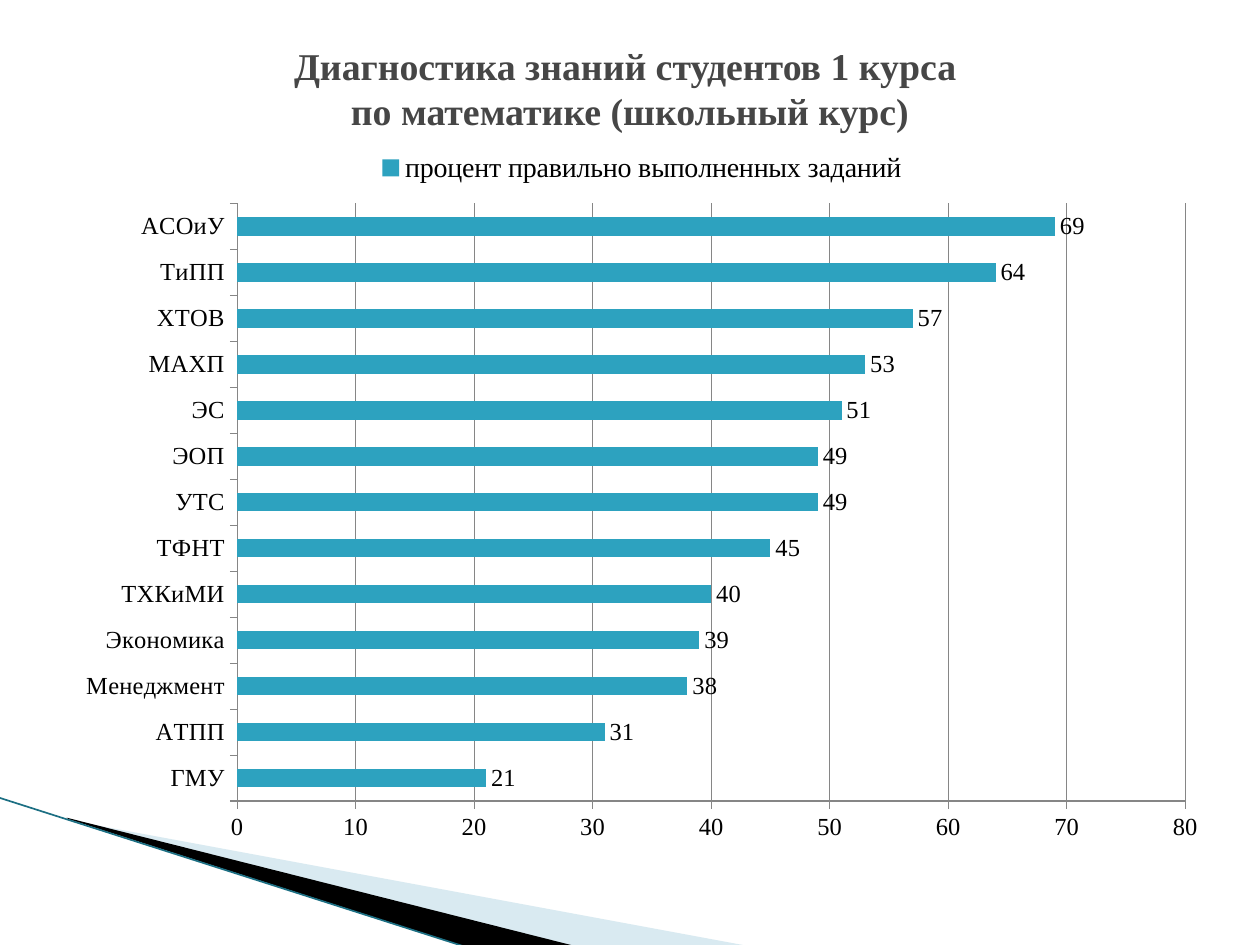
"""Builds a slide with a bar chart of first-year maths test results."""
from lxml import etree
from pptx import Presentation
from pptx.chart.data import CategoryChartData
from pptx.dml.color import RGBColor
from pptx.enum.chart import XL_CHART_TYPE, XL_LABEL_POSITION, XL_LEGEND_POSITION, XL_TICK_MARK
from pptx.enum.shapes import MSO_CONNECTOR
from pptx.enum.text import MSO_ANCHOR, PP_ALIGN
from pptx.oxml.ns import qn
from pptx.util import Inches, Pt

BAR = XL_CHART_TYPE.BAR_CLUSTERED
OUT_END = XL_LABEL_POSITION.OUTSIDE_END
TOP = XL_LEGEND_POSITION.TOP
TICK = XL_TICK_MARK.OUTSIDE
LINE = MSO_CONNECTOR.STRAIGHT
MIDDLE = MSO_ANCHOR.MIDDLE
CENTER = PP_ALIGN.CENTER
FACE = "Times New Roman"


def paint(fmt, color):
    fmt.solid()
    fmt.fore_color.rgb = RGBColor.from_string(color)


def style(font, size, color="000000", bold=False):
    font.name = FACE
    font.size = Pt(size)
    font.bold = bold
    paint(font.fill, color)


deck = Presentation()
deck.slide_width = Inches(10)
deck.slide_height = Inches(7.5)
slide = deck.slides.add_slide(deck.slide_layouts[5])
shapes = slide.shapes

wedges = [
    ("A0CBDC", 40, [(0.55, 6.51), (5.95, 7.51), (4.56, 7.51), (0.55, 6.5)]),
    ("000000", 100, [(0.53, 6.49), (4.57, 7.51), (3.72, 7.52), (0.54, 6.5)]),
]
for color, alpha, spots in wedges:
    points = [(Inches(x), Inches(y)) for x, y in spots]
    pen = shapes.build_freeform(*points[0], scale=1.0)
    pen.add_line_segments(points[1:], close=True)
    wedge = pen.convert_to_shape()
    wedge.shadow.inherit = False
    wedge.line.fill.background()
    paint(wedge.fill, color)
    if alpha < 100:
        tone = wedge.fill._xPr.find(qn("a:solidFill"))[0]
        etree.SubElement(tone, qn("a:alpha"), val=str(alpha * 1000))

edge = shapes.add_connector(LINE, Inches(-0.01), Inches(6.33), Inches(3.71), Inches(7.52))
paint(edge.line.fill, "1C6F83")
edge.line.width = Pt(0.95)
etree.SubElement(edge._element.spPr, qn("a:effectLst"))

scores = {
    "ГМУ": 21, "АТПП": 31, "Менеджмент": 38, "Экономика": 39, "ТХКиМИ": 40,
    "ТФНТ": 45, "УТС": 49, "ЭОП": 49, "ЭС": 51, "МАХП": 53,
    "ХТОВ": 57, "ТиПП": 64, "АСОиУ": 69,
}
data = CategoryChartData()
data.categories = list(scores)
data.add_series("процент правильно выполненных заданий", list(scores.values()))
frame = shapes.add_chart(BAR, Inches(0.5), Inches(1.09), Inches(9.19), Inches(5.7), data)
chart = frame.chart
chart.has_title = False
style(chart.font, 14)

chart.has_legend = True
chart.legend.position = TOP
chart.legend.include_in_layout = False
style(chart.legend.font, 16)

plot = chart.plots[0]
plot.gap_width = 150
plot.vary_by_categories = False
paint(plot.series[0].format.fill, "2DA2BF")
plot.has_data_labels = True
labels = plot.data_labels
labels.show_value = True
labels.position = OUT_END
style(labels.font, 14)

grid = chart.value_axis
grid.minimum_scale = 0
grid.maximum_scale = 80
grid.major_unit = 10
grid.has_major_gridlines = True
for axis in (chart.category_axis, grid):
    axis.major_tick_mark = TICK
    style(axis.tick_labels.font, 14)
for part in (chart.category_axis, grid, grid.major_gridlines):
    paint(part.format.line.fill, "868686")
    part.format.line.width = Pt(0.75)

title = shapes.title
title.left, title.top = Inches(0.5), Inches(0.3)
title.width, title.height = Inches(9), Inches(0.79)
text = title.text_frame
text.word_wrap = True
text.vertical_anchor = MIDDLE
text.text = "Диагностика знаний студентов 1 курса \vпо математике (школьный курс)"
head = text.paragraphs[0]
head.alignment = CENTER
style(head.font, 21.6, "464646", True)

deck.save("out.pptx")
